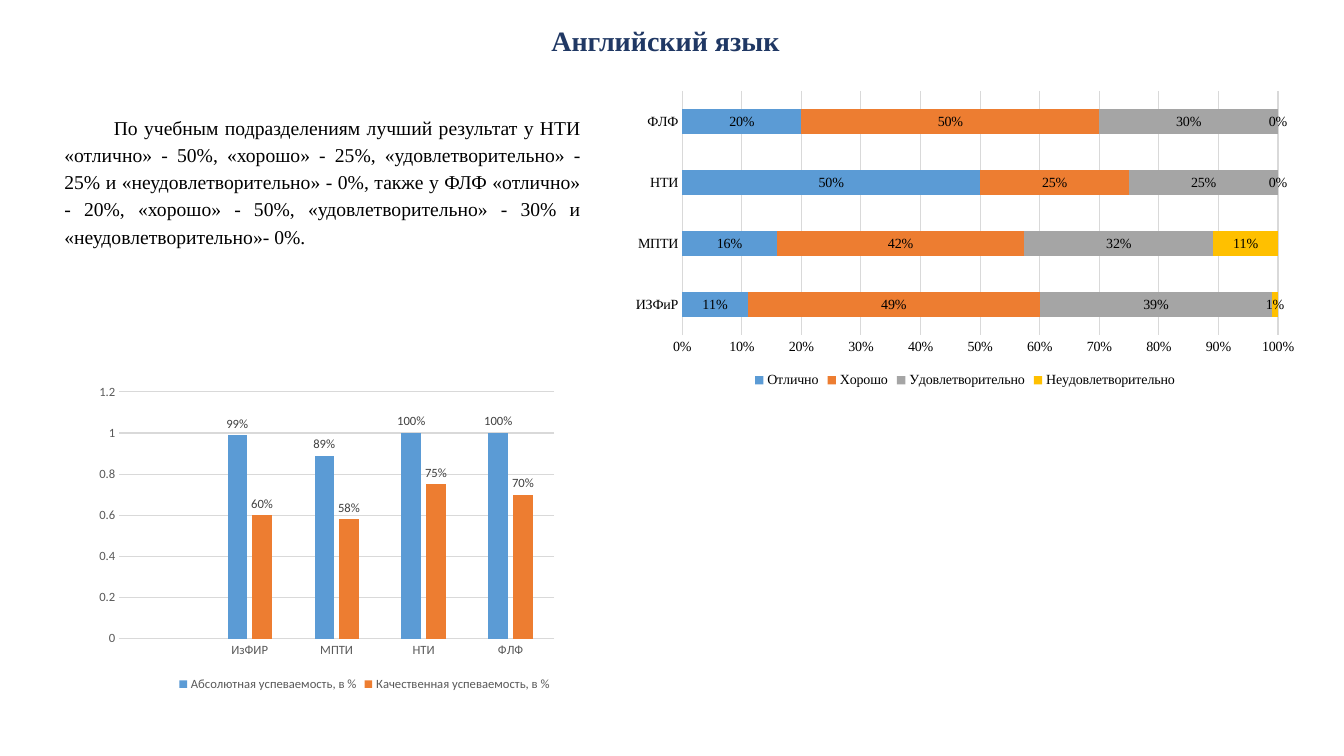
from dataclasses import dataclass

from lxml.etree import SubElement
from pptx import Presentation
from pptx.chart.data import CategoryChartData
from pptx.dml.color import RGBColor
from pptx.enum.chart import XL_CHART_TYPE as ChartType
from pptx.enum.chart import XL_LABEL_POSITION as LabelPosition
from pptx.enum.chart import XL_LEGEND_POSITION as LegendPosition
from pptx.enum.chart import XL_TICK_MARK as TickMark
from pptx.enum.text import MSO_ANCHOR, PP_ALIGN
from pptx.oxml.ns import qn
from pptx.util import Inches, Pt

SLIDE_WIDTH = Inches(13.33)
SLIDE_HEIGHT = Inches(7.5)
COLUMN = SLIDE_WIDTH / 100
ROW = SLIDE_HEIGHT / 100

BLACK = RGBColor(0x00, 0x00, 0x00)
NAVY = RGBColor(0x20, 0x38, 0x64)
DARK_GRAY = RGBColor(0x40, 0x40, 0x40)
GRAY = RGBColor(0x59, 0x59, 0x59)
LIGHT_GRAY = RGBColor(0xD9, 0xD9, 0xD9)
SERIES_COLORS = (
    RGBColor(0x5B, 0x9B, 0xD5),
    RGBColor(0xED, 0x7D, 0x31),
    RGBColor(0xA5, 0xA5, 0xA5),
    RGBColor(0xFF, 0xC0, 0x00),
)
SERIF = "Times New Roman"
SANS = "Calibri"

TITLE_BOX = (6.38, 0.13, 86.27, 10.93)
SUMMARY_BOX = (4.05, 14.27, 39.91, 19.47)
GRADES_BOX = (46.29, 11.2, 51.01, 40.67)
PROGRESS_BOX = (6.38, 47.87, 41.49, 44.13)

TITLE = "Английский язык"
SUMMARY = (
    "По учебным подразделениям лучший результат у НТИ «отлично» - 50%, "
    "«хорошо» - 25%, «удовлетворительно» - 25% и «неудовлетворительно» - 0%, "
    "также у ФЛФ «отлично» - 20%, «хорошо» - 50%, «удовлетворительно» - 30% "
    "и «неудовлетворительно»- 0%."
)
GRADES_CATEGORIES = ("ИЗФиР", "МПТИ", "НТИ", "ФЛФ")
GRADES = {
    "Отлично": (0.11, 0.16, 0.5, 0.2),
    "Хорошо": (0.49, 0.42, 0.25, 0.5),
    "Удовлетворительно": (0.39, 0.32, 0.25, 0.3),
    "Неудовлетворительно": (0.01, 0.11, 0, 0),
}
PROGRESS_CATEGORIES = ("", "ИзФИР", "МПТИ", "НТИ", "ФЛФ")
PROGRESS = {
    "Абсолютная успеваемость, в %": (None, 0.99, 0.89, 1, 1),
    "Качественная успеваемость, в %": (None, 0.6, 0.58, 0.75, 0.7),
}


@dataclass
class ChartStyle:
    kind: ChartType
    font_name: str
    font_size: int
    text_color: RGBColor
    label_color: RGBColor
    label_position: LabelPosition
    axis_format: str
    gap: int
    overlap: int


GRADES_STYLE = ChartStyle(
    ChartType.BAR_STACKED_100, SERIF, 10, BLACK, BLACK,
    LabelPosition.CENTER, "0%", 150, 100,
)
PROGRESS_STYLE = ChartStyle(
    ChartType.COLUMN_CLUSTERED, SANS, 9, GRAY, DARK_GRAY,
    LabelPosition.OUTSIDE_END, "General", 219, -27,
)


def to_lengths(box):
    left, top, width, height = box
    return (round(left * COLUMN), round(top * ROW),
            round(width * COLUMN), round(height * ROW))


def set_font(font, name, size, color, bold=False):
    font.name = name
    font.size = Pt(size)
    font.color.rgb = color
    font.bold = bold


def set_line(line):
    line.color.rgb = LIGHT_GRAY
    line.width = Pt(0.75)


def fill_title(slide, box):
    title = slide.shapes.title
    title.left, title.top, title.width, title.height = to_lengths(box)
    text_frame = title.text_frame
    text_frame.text = TITLE
    text_frame.vertical_anchor = MSO_ANCHOR.MIDDLE
    paragraph = text_frame.paragraphs[0]
    paragraph.alignment = PP_ALIGN.CENTER
    paragraph.line_spacing = 0.9
    set_font(paragraph.runs[0].font, SERIF, 20, NAVY, bold=True)


def add_summary(slide, box):
    text_frame = slide.shapes.add_textbox(*to_lengths(box)).text_frame
    text_frame.word_wrap = True
    text_frame.text = SUMMARY
    paragraph = text_frame.paragraphs[0]
    paragraph.alignment = PP_ALIGN.JUSTIFY
    paragraph.line_spacing = 1.15
    paragraph.space_before = Pt(12)
    paragraph.space_after = Pt(8)
    paragraph._p.get_or_add_pPr().set("indent", str(Inches(0.49)))
    set_font(paragraph.runs[0].font, SERIF, 14, BLACK)


def add_bars(slide, box, categories, series_values, style):
    data = CategoryChartData(number_format="0%")
    data.categories = categories
    for name, values in series_values.items():
        data.add_series(name, values)
    chart = slide.shapes.add_chart(style.kind, *to_lengths(box), data).chart
    chart.has_title = False
    set_font(chart.font, style.font_name, style.font_size, style.text_color)

    chart.has_legend = True
    chart.legend.position = LegendPosition.BOTTOM
    chart.legend.include_in_layout = False
    fonts = [chart.legend.font]

    for axis in (chart.category_axis, chart.value_axis):
        axis.major_tick_mark = axis.minor_tick_mark = TickMark.NONE
        fonts.append(axis.tick_labels.font)
    for font in fonts:
        set_font(font, style.font_name, style.font_size, style.text_color)
    set_line(chart.category_axis.format.line)
    value_axis = chart.value_axis
    value_axis.format.line.fill.background()
    value_axis.has_major_gridlines = True
    set_line(value_axis.major_gridlines.format.line)
    value_axis.tick_labels.number_format = style.axis_format
    value_axis.tick_labels.number_format_is_linked = False

    plot = chart.plots[0]
    plot.vary_by_categories = False
    plot.gap_width = style.gap
    plot.overlap = style.overlap
    for series, color in zip(plot.series, SERIES_COLORS):
        series.format.fill.solid()
        series.format.fill.fore_color.rgb = color
        series.invert_if_negative = False
        labels = series.data_labels
        labels.show_value = True
        labels.position = style.label_position
        labels.number_format = "0%"
        labels.number_format_is_linked = False
        set_font(labels.font, style.font_name, style.font_size, style.label_color)
    return chart


def place_plot(chart, left, top, width, height):
    plot_area = chart.plots[0]._element.getparent()
    layout = plot_area.find(qn("c:layout"))
    if layout is None:
        layout = SubElement(plot_area, qn("c:layout"))
        plot_area.insert(0, layout)
    manual = SubElement(layout, qn("c:manualLayout"))
    settings = {
        "layoutTarget": "inner", "xMode": "edge", "yMode": "edge",
        "x": left, "y": top, "w": width, "h": height,
    }
    for name, value in settings.items():
        SubElement(manual, qn(f"c:{name}")).set("val", str(value))


def main():
    presentation = Presentation()
    presentation.slide_width = SLIDE_WIDTH
    presentation.slide_height = SLIDE_HEIGHT
    slide = presentation.slides.add_slide(presentation.slide_layouts[5])
    fill_title(slide, TITLE_BOX)
    add_bars(slide, GRADES_BOX, GRADES_CATEGORIES, GRADES, GRADES_STYLE)
    progress_chart = add_bars(
        slide, PROGRESS_BOX, PROGRESS_CATEGORIES, PROGRESS, PROGRESS_STYLE)
    place_plot(progress_chart, 0.06, 0.09, 0.78, 0.74)
    add_summary(slide, SUMMARY_BOX)
    presentation.save("out.pptx")


if __name__ == "__main__":
    main()
